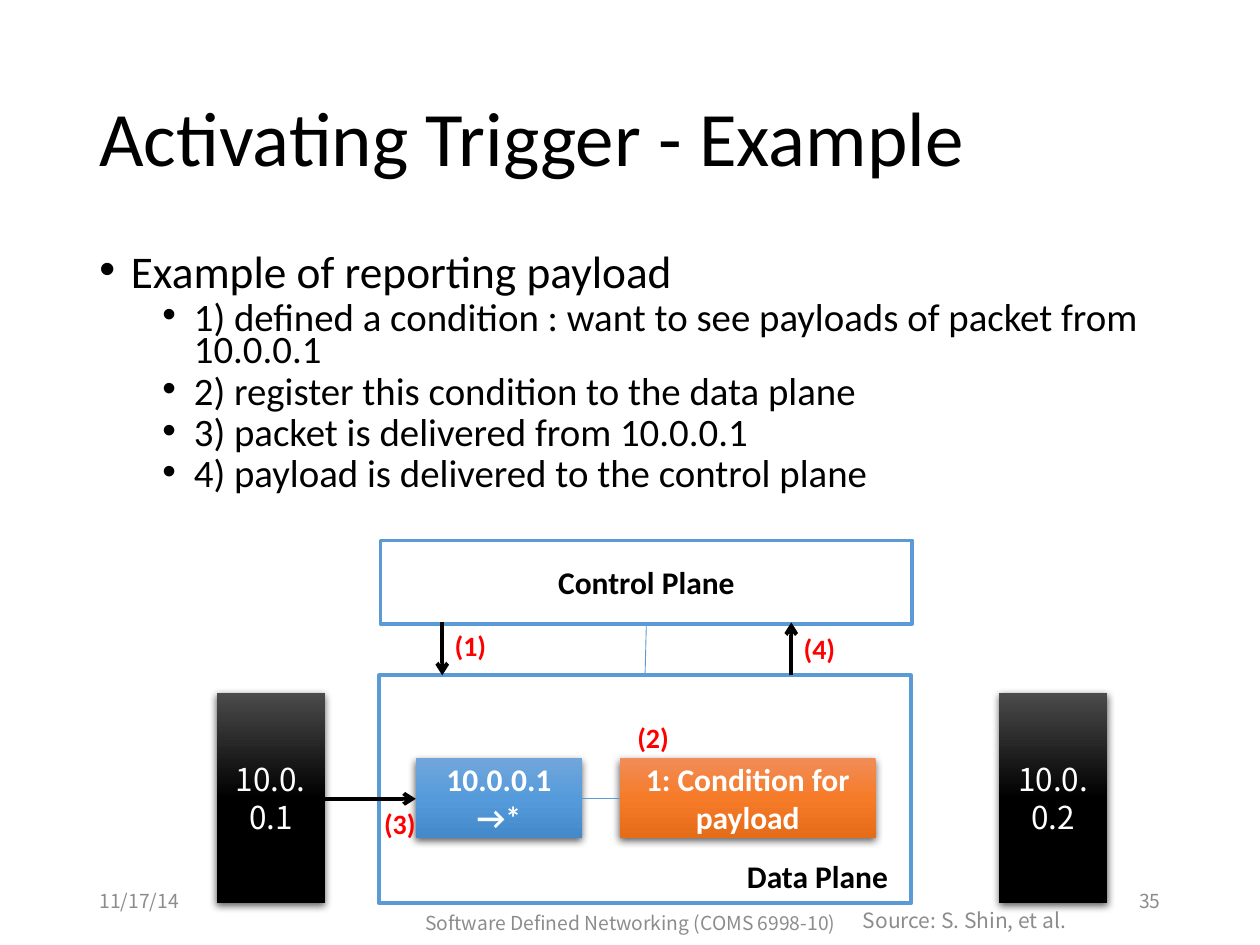
from copy import deepcopy

from pptx import Presentation, util as u
from pptx.dml import color as dml
from pptx.enum import shapes, text
from pptx.oxml import parse_xml
from pptx.oxml.ns import nsdecls, qn

COLS, ROWS = 100, 75
BLACK, WHITE, RED, GREY, EDGE = "000000", "FFFFFF", "FF0000", "8C8C8C", "5B9BD5"
BLUE = ("71A6DB", "559BDB", "448ACA")
ORANGE = ("F18C57", "F67B28", "E56C19")
DARK = ("4B4B4B", BLACK, BLACK)

BASE = dict(name="Calibri", size=18, bold=False, color=BLACK)
HEAD = BASE | dict(bold=True)
LIGHT = HEAD | dict(color=WHITE)
STEP = HEAD | dict(size=16, color=RED)
HOST = BASE | dict(name="Noto Sans CJK KR", color=WHITE)
FOOT = HOST | dict(size=11, color=GREY)

LEFT, MID, RIGHT = text.PP_ALIGN.LEFT, text.PP_ALIGN.CENTER, text.PP_ALIGN.RIGHT
POINTS = [
    "1) defined a condition : want to see payloads of packet from 10.0.0.1",
    "2) register this condition to the data plane",
    "3) packet is delivered from 10.0.0.1",
    "4) payload is delivered to the control plane",
]


def rgb(code):
    return dml.RGBColor.from_string(code)


class Deck:
    """Holds the current slide; lengths are columns and rows of the grid."""

    def __init__(self):
        self.prs = Presentation()
        self.prs.slide_width, self.prs.slide_height = u.Inches(10), u.Inches(7.5)
        self.slide = self.prs.slides.add_slide(self.prs.slide_layouts[6])

    def span(self, *cells):
        """Turn alternating column and row counts into lengths."""
        units = self.prs.slide_width / COLS, self.prs.slide_height / ROWS
        return [round(n * units[i % 2]) for i, n in enumerate(cells)]

    def put(self, para, words, style, align=LEFT, **extra):
        """Add styled words to a paragraph; extra sets paragraph values."""
        run = para.add_run()
        run.text = words
        for key, val in style.items():
            if key == "color":
                run.font.color.rgb = rgb(val)
            else:
                setattr(run.font, key, u.Pt(val) if key == "size" else val)
        for key, val in dict(alignment=align, **extra).items():
            setattr(para, key, val)

    def label(self, at, words, style, align=LEFT, wrap=True, middle=True, **extra):
        frame = self.slide.shapes.add_textbox(*self.span(*at)).text_frame
        frame.word_wrap = wrap
        if not wrap:
            frame.auto_size = text.MSO_AUTO_SIZE.SHAPE_TO_FIT_TEXT
        if middle:
            frame.vertical_anchor = text.MSO_ANCHOR.MIDDLE
        self.put(frame.paragraphs[0], words, style, align, **extra)

    def tag(self, at, words, style):
        self.label(at, words, style, wrap=False, middle=False)

    def bullets(self, at, items):
        """Each item is (words, size, indent in columns, points before)."""
        frame = self.slide.shapes.add_textbox(*self.span(*at)).text_frame
        frame.word_wrap = True
        for i, (words, size, indent, gap) in enumerate(items):
            para = frame.add_paragraph() if i else frame.paragraphs[0]
            self.put(para, words, BASE | dict(size=size),
                     line_spacing=0.7, space_before=u.Pt(gap))
            left, hang = self.span(indent, 0, 2.5)[::2]
            props = para._p.get_or_add_pPr()
            props.set("marL", str(left))
            props.set("indent", str(-hang))
            for mark in ('<a:buFont %s typeface="Arial"/>', '<a:buChar %s char="•"/>'):
                props.append(parse_xml(mark % nsdecls("a")))

    def box(self, at, words="", style=HEAD):
        box = self.slide.shapes.add_shape(shapes.MSO_SHAPE.RECTANGLE, *self.span(*at))
        box.shadow.inherit = False
        box.fill.solid()
        box.fill.fore_color.rgb = rgb(WHITE)
        box.line.color.rgb = rgb(EDGE)
        box.line.width = u.Pt(2.25)
        if words:
            box.text_frame.word_wrap = True
            box.text_frame.vertical_anchor = text.MSO_ANCHOR.MIDDLE
            self.put(box.text_frame.paragraphs[0], words, style, MID)
        return box

    def block(self, at, words, style, tones):
        """A borderless box with a three-tone gradient and a soft shadow."""
        box = self.box(at, words, style)
        box.line.fill.background()
        box.fill.gradient()
        box.fill.gradient_angle = 270
        props = box._element.spPr
        stops = props.find(".//" + qn("a:gsLst"))
        stops.insert(1, deepcopy(stops[0]))
        for i, (stop, tone) in enumerate(zip(box.fill.gradient_stops, tones)):
            stop.position = i / 2
            stop.color.rgb = rgb(tone)
        props.find(qn("a:effectLst")).append(parse_xml(
            f'<a:outerShdw {nsdecls("a")} blurRad="{u.Pt(4.5)}" dist="{u.Pt(1.5)}" '
            'dir="5400000" algn="ctr" rotWithShape="0"><a:srgbClr val="000000">'
            '<a:alpha val="63000"/></a:srgbClr></a:outerShdw>'))

    def link(self, ends, tone=EDGE, width=0.5, arrow=False):
        link = self.slide.shapes.add_connector(
            shapes.MSO_CONNECTOR.STRAIGHT, *self.span(*ends))
        link.line.color.rgb = rgb(tone)
        link.line.width = u.Pt(width)
        props = link._element.spPr
        if arrow:
            props.find(qn("a:ln")).append(
                parse_xml(f'<a:tailEnd {nsdecls("a")} type="arrow"/>'))
        props.append(parse_xml(f'<a:effectLst {nsdecls("a")}/>'))

    def arrow(self, *ends):
        self.link(ends, BLACK, 2.25, True)


def main():
    deck = Deck()
    deck.label((6.9, 4, 86.2, 14.5), "Activating Trigger - Example",
               BASE | dict(size=44), line_spacing=0.9)
    deck.bullets((6.9, 20, 86.2, 19.7),
                 [("Example of reporting payload", 25.9, 2.5, 10)]
                 + [(point, 22.2, 7.5, 5) for point in POINTS])

    top, low, flow = 49.4, 53.6, 63.4  # plane edges and packet row
    deck.box((30.1, low, 42.2, 18.1))
    deck.block((33, 60.2, 13.2, 6.3), "10.0.0.1 →*", LIGHT, BLUE)
    deck.block((49.2, 60.2, 20.3, 6.3), "1: Condition for payload", LIGHT, ORANGE)
    deck.box((30.2, 42.9, 42.2, 6.6), "Control Plane")
    for col, host in ((17.2, "10.0.0.1"), (79.3, "10.0.0.2")):
        deck.block((col, 55, 8.6, 16.7), host, HOST, DARK)

    deck.link((51.3, top, 51.2, low))
    deck.link((46.1, flow, 49.2, flow))
    deck.arrow(25.8, flow, 33, flow)
    deck.arrow(35.1, top, 35.1, low)
    deck.arrow(62.8, low, 62.8, top)

    deck.tag((58.3, 67.5, 13.4, 4), "Data Plane", HEAD)
    spots = (35.1, 49.4), (49.6, 56.7), (29.5, 63.5), (62.8, 49.6)
    for i, spot in enumerate(spots, 1):
        deck.tag((*spot, 4.6, 3.7), f"({i})", STEP)

    deck.label((6.9, 69.5, 22.5, 4), "11/17/14", FOOT)
    deck.label((30.8, 71.5, 38.5, 3.5),
               "Software Defined Networking (COMS 6998-10)", FOOT, MID)
    deck.label((70.6, 69.5, 22.5, 4), "35", FOOT, RIGHT)
    deck.label((67.5, 71, 26.7, 4), "Source: S. Shin, et al.", FOOT | dict(size=12))
    deck.prs.save("out.pptx")


if __name__ == "__main__":
    main()
